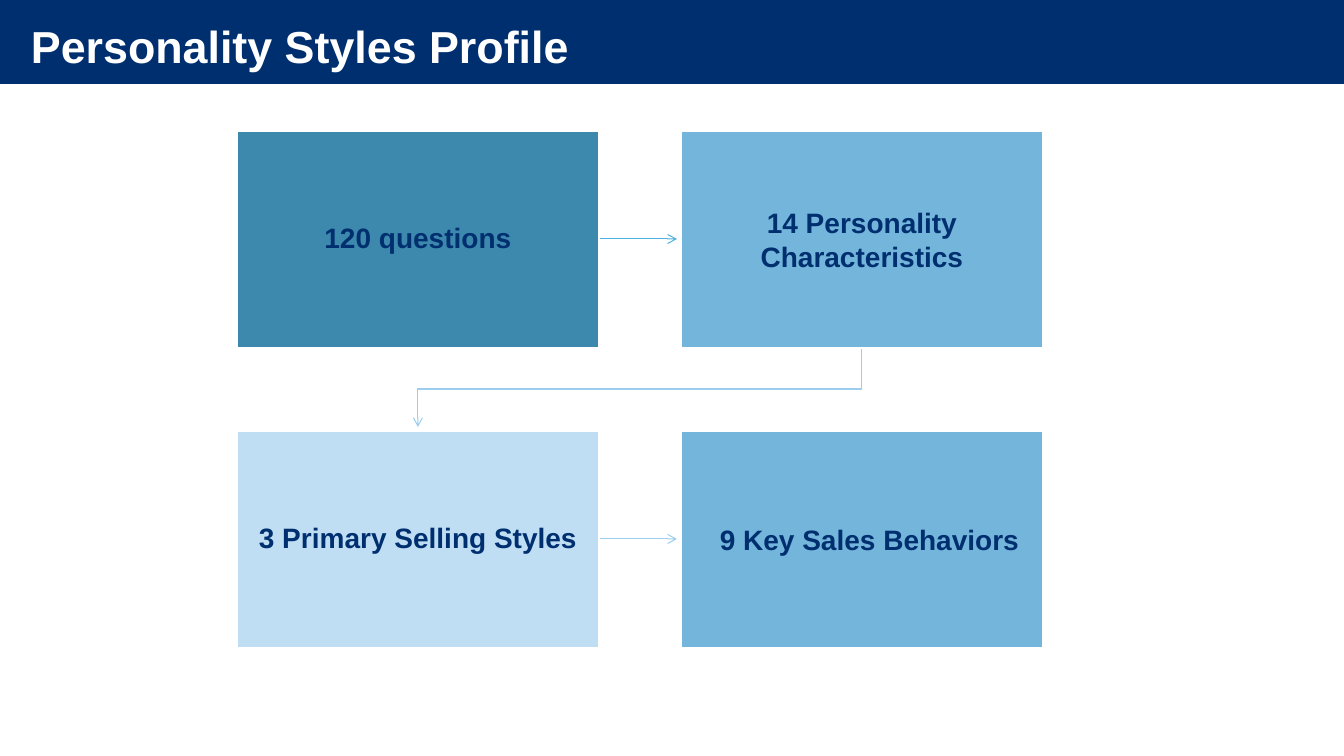
from dataclasses import dataclass

from pptx import Presentation
from pptx.dml.color import RGBColor
from pptx.enum.shapes import MSO_CONNECTOR as CONNECTOR, MSO_SHAPE as SHAPE
from pptx.enum.text import MSO_ANCHOR as ANCHOR, MSO_AUTO_SIZE as AUTO_SIZE, PP_ALIGN as ALIGN
from pptx.oxml.ns import qn
from pptx.util import Emu, Pt
from lxml.etree import SubElement

NAVY, WHITE, PALE_LINE = "002F70", "FFFFFF", "9BCEEE"
LEFTS, TOPS = (237, 681), (131, 431)
BOX_W, BOX_H = 362, 217
INSET = 16
ARROW_GAP = 4


@dataclass
class Step:
    text: str
    col: int
    row: int
    fill: str
    spacing: float = 1.0
    indent: int = 0


STEPS = [
    Step("120 questions", 0, 0, "3C89AD", spacing=0.9),
    Step("14 Personality Characteristics", 1, 0, "73B5DB"),
    Step("3 Primary Selling Styles", 0, 1, "BFDEF4", spacing=0.9),
    Step("9 Key Sales Behaviors", 1, 1, "73B5DB", indent=15),
]


def px(n: float) -> Emu:
    return Emu(round(n * 914400 / 100.8))


def rgb(color: str) -> RGBColor:
    return RGBColor.from_string(color)


def set_font(p, size: int, color: str) -> None:
    font = p.font
    font.name, font.size, font.bold = "Arial", Pt(size), True
    font.color.rgb = rgb(color)


def add_rect(shapes, left: int, top: int, width: int, height: int, fill: str):
    s = shapes.add_shape(SHAPE.RECTANGLE, px(left), px(top), px(width), px(height))
    s.shadow.inherit = False
    s.fill.solid()
    s.fill.fore_color.rgb = rgb(fill)
    s.line.fill.background()
    return s


def add_title(slide, text: str) -> None:
    """Fill the title placeholder and lay the navy band behind it."""
    band = add_rect(slide.shapes, 0, -3, 1344, 87, NAVY)
    title = slide.shapes.title
    title._element.addprevious(band._element)
    title.left, title.top, title.width, title.height = px(0), px(-3), px(1344), px(98)
    tf = title.text_frame
    tf.text = text
    tf.auto_size, tf.word_wrap = AUTO_SIZE.NONE, False
    tf.vertical_anchor = ANCHOR.MIDDLE
    tf.margin_left, tf.margin_right = px(31), px(20)
    tf.margin_top = tf.margin_bottom = 0
    p = tf.paragraphs[0]
    p.alignment = ALIGN.LEFT
    set_font(p, 32, WHITE)


def add_step(shapes, step: Step) -> None:
    s = add_rect(shapes, LEFTS[step.col], TOPS[step.row], BOX_W, BOX_H, step.fill)
    s.line.color.rgb = rgb(WHITE)
    s.line.width = Pt(2)
    tf = s.text_frame
    tf.word_wrap = True
    tf.vertical_anchor = ANCHOR.MIDDLE
    tf.margin_left = px(INSET + step.indent)
    tf.margin_right = tf.margin_top = tf.margin_bottom = px(INSET)
    p = tf.paragraphs[0]
    p.text = step.text
    p.alignment = ALIGN.CENTER
    p.line_spacing = step.spacing
    set_font(p, 20, NAVY)


def style_arrow(line, color: str) -> None:
    line.color.rgb = rgb(color)
    line.width = Pt(0.75)
    SubElement(line._get_or_add_ln(), qn("a:tailEnd"), type="arrow")


def add_row_arrow(shapes, row: int, color: str) -> None:
    y = px(TOPS[row] + BOX_H // 2)
    start, end = px(LEFTS[0] + BOX_W), px(LEFTS[1] - ARROW_GAP)
    s = shapes.add_connector(CONNECTOR.STRAIGHT, start, y, end, y)
    style_arrow(s.line, color)
    SubElement(s._element.spPr, qn("a:effectLst"))


def add_return_arrow(shapes, color: str) -> None:
    """Bent arrow from the upper right box to the lower left one."""
    left, right = (x + BOX_W // 2 for x in LEFTS)
    top, bottom = TOPS[0] + BOX_H, TOPS[1] - ARROW_GAP
    middle = (top + bottom + ARROW_GAP) // 2
    builder = shapes.build_freeform(right, top, scale=px(1))
    builder.add_line_segments([(right, middle), (left, middle), (left, bottom)], close=False)
    s = builder.convert_to_shape()
    s.fill.background()
    s.shadow.inherit = False
    style_arrow(s.line, color)


def main() -> None:
    prs = Presentation()
    prs.slide_width, prs.slide_height = px(1344), px(756)
    slide = prs.slides.add_slide(prs.slide_layouts[5])
    add_title(slide, "Personality Styles Profile")
    add_row_arrow(slide.shapes, 0, "4DB1E0")
    add_return_arrow(slide.shapes, PALE_LINE)
    add_row_arrow(slide.shapes, 1, PALE_LINE)
    for step in STEPS:
        add_step(slide.shapes, step)
    prs.save("out.pptx")


if __name__ == "__main__":
    main()
